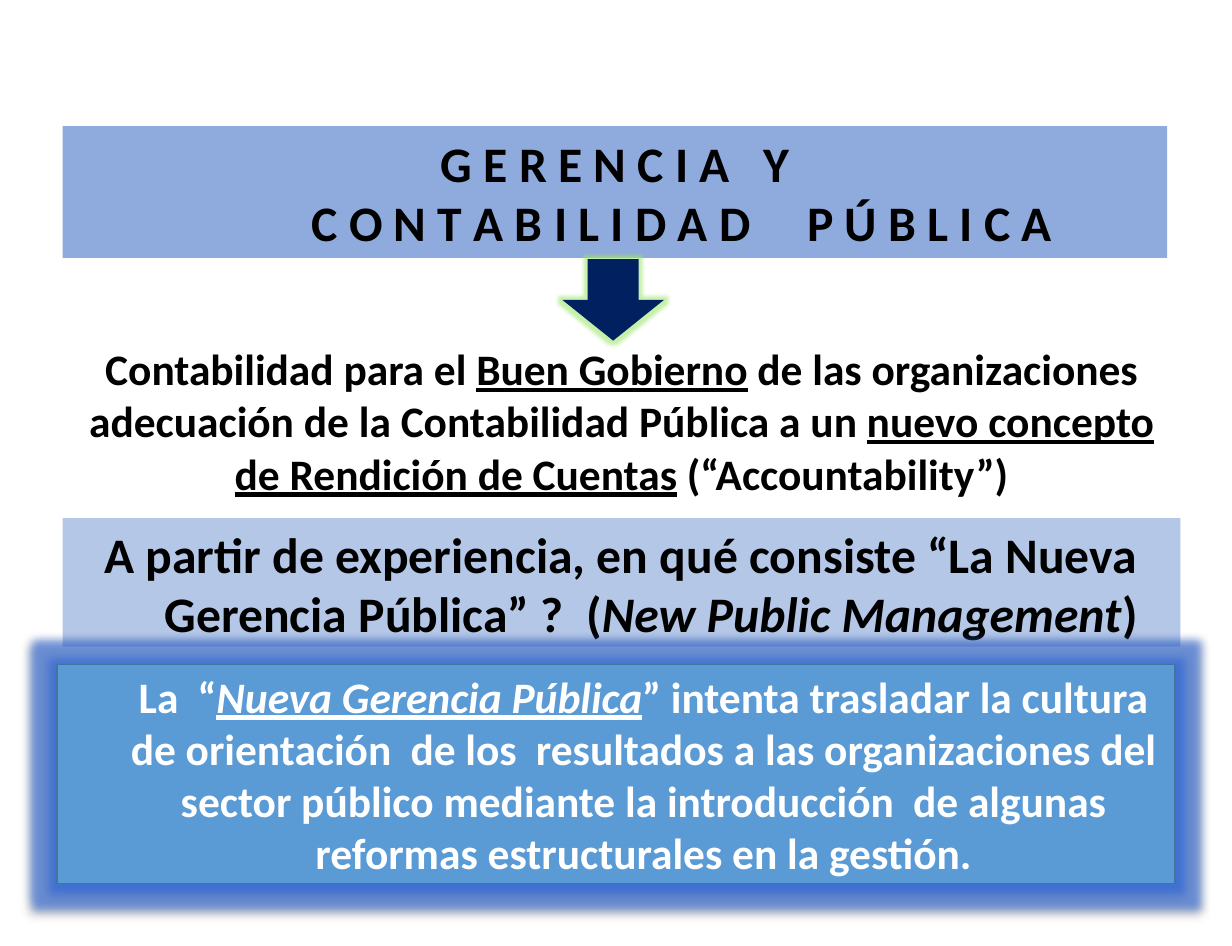
from lxml import etree
from pptx import Presentation, util as u
from pptx.dml.color import RGBColor
from pptx.enum import shapes, text
from pptx.oxml import ns

WIDE, HIGH = u.Pt(793.75), u.Pt(609.5)
BLACK = RGBColor(0, 0, 0)
WHITE = RGBColor(0xFF, 0xFF, 0xFF)
BAND = RGBColor(0x8F, 0xAA, 0xDC)
PALE = RGBColor(0xB4, 0xC7, 0xE7)
NAVY = RGBColor(0, 0x20, 0x60)
BLUE = RGBColor(0x5B, 0x9B, 0xD5)
EDGE = RGBColor(0x43, 0x73, 0x9E)
LIME = RGBColor(0x9F, 0xE8, 0x70)
HALO = RGBColor(0x2F, 0x69, 0xDB)
RECT = shapes.MSO_SHAPE.RECTANGLE
DOWN = shapes.MSO_SHAPE.DOWN_ARROW
TOP = text.MSO_ANCHOR.TOP
MID = text.MSO_ANCHOR.MIDDLE


def place(box):
    x, y, w, h = box
    return [int(n) for n in (WIDE * x / 100, HIGH * y / 100,
                             WIDE * w / 100, HIGH * h / 100)]


def assign(item, form):
    for name, value in form.items():
        setattr(item, name, value)


def block(slide, kind, box, fill, edge=None):
    shape = slide.shapes.add_shape(kind, *place(box))
    shape.shadow.inherit = False
    shape.fill.solid()
    shape.fill.fore_color.rgb = fill
    if edge is None:
        shape.line.fill.background()
    else:
        shape.line.color.rgb = edge
        shape.line.width = u.Pt(1)
    return shape


def effect(shape, kind, color, alpha, **form):
    group = shape.element.spPr.find(ns.qn("a:effectLst"))
    node = etree.SubElement(group, ns.qn("a:" + kind),
                            {name: str(value) for name, value in form.items()})
    tint = etree.SubElement(node, ns.qn("a:srgbClr"), val=str(color))
    etree.SubElement(tint, ns.qn("a:alpha"), val=str(alpha * 1000))


def write(shape, lines, size, color, anchor=MID):
    frame = shape.text_frame
    assign(frame, {"word_wrap": True, "vertical_anchor": anchor})
    for order, (left, first, runs) in enumerate(lines):
        para = frame.add_paragraph() if order else frame.paragraphs[0]
        para.alignment = text.PP_ALIGN.CENTER
        props = para._p.get_or_add_pPr()
        props.set("marL", str(u.Inches(left)))
        props.set("indent", str(u.Inches(first)))
        for words, form in runs:
            run = para.add_run()
            run.text = words
            look = {"name": "Calibri", "size": u.Pt(size), "bold": True}
            assign(run.font, look | form.get("font", {}))
            run.font.color.rgb = color
            if "gap" in form:
                run.font._element.set("spc", str(form["gap"] * 100))


def title(slide, box):
    shape = block(slide, RECT, box, BAND)
    write(shape, [
        (0, -0.12, [("G E R E N C I A", {}), (" ", {"gap": 14}), ("Y", {})]),
        (1.2, 0, [("C O N T A B I L I D A D", {}), (" ", {"gap": 29}),
                  ("P Ú B L I C A", {})]),
    ], 32, BLACK)


def arrow(slide, box):
    shape = block(slide, DOWN, box, NAVY)
    effect(shape, "glow", LIME, 60, rad=u.Pt(5))


def concept(slide, box):
    shape = slide.shapes.add_textbox(*place(box))
    line = {"font": {"underline": True}}
    write(shape, [(0, 0, [
        ("Contabilidad para el ", {}),
        ("Buen Gobierno", line),
        (" de las organizaciones adecuación de la Contabilidad Pública a un ", {}),
        ("nuevo concepto de Rendición de Cuentas", line),
        (" (“Accountability”)", {}),
    ])], 28, BLACK, TOP)


def question(slide, box):
    shape = block(slide, RECT, box, PALE)
    write(shape, [(0.53, -0.53, [
        ("A partir de experiencia, en qué consiste “La Nueva Gerencia Pública” ?", {}),
        (" ", {"gap": 7}),
        ("(", {}),
        ("New Public Management", {"font": {"italic": True}}),
        (")", {}),
    ])], 32, BLACK, TOP)


def answer(slide, box):
    shape = block(slide, RECT, box, BLUE, EDGE)
    effect(shape, "glow", HALO, 60, rad=u.Pt(11))
    effect(shape, "outerShdw", BLACK, 40, blurRad=u.Pt(4), dist=u.Pt(3),
           dir=5400000, rotWithShape=0)
    space = (" ", {"gap": 6})
    write(shape, [(0.49, 0, [
        ("La", {}), space, ("“", {}),
        ("Nueva Gerencia Pública", {"font": {"italic": True, "underline": True}}),
        ("” intenta trasladar la cultura de orientación", {}), space,
        ("de los", {}), space,
        ("resultados a las organizaciones del sector público mediante "
         "la introducción", {}), space,
        ("de algunas reformas estructurales en la gestión.", {}),
    ])], 28, WHITE)


def main():
    deck = Presentation()
    deck.slide_width = WIDE
    deck.slide_height = HIGH
    slide = deck.slides.add_slide(deck.slide_layouts[6])
    title(slide, (5.08, 13.34, 89.66, 13.93))
    arrow(slide, (45.64, 27.39, 8.26, 8.62))
    concept(slide, (5.26, 35.6, 90.38, 17.83))
    question(slide, (5.08, 54.78, 90.74, 13.58))
    answer(slide, (4.63, 70.25, 90.74, 23.14))
    deck.save("out.pptx")


if __name__ == "__main__":
    main()
